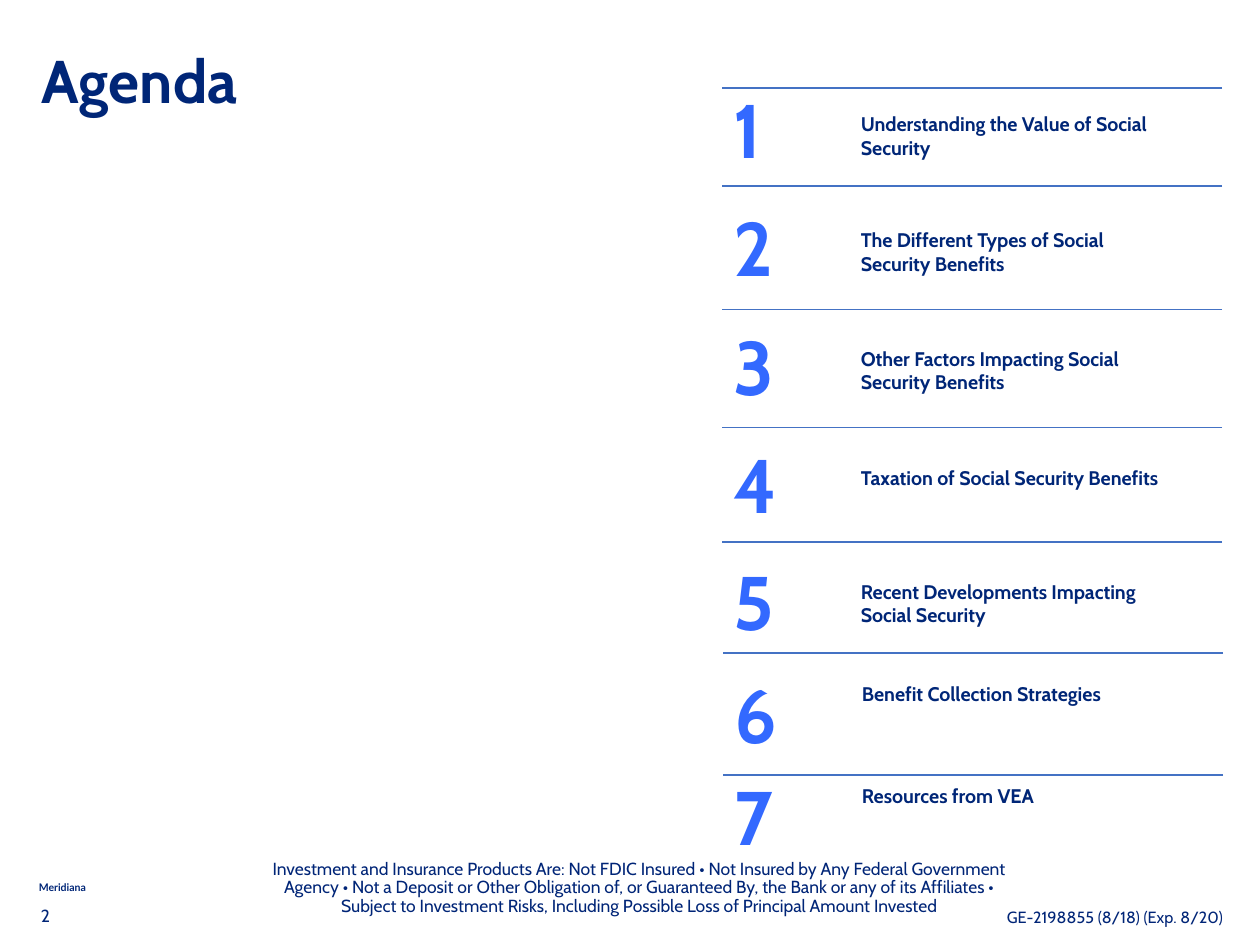
from dataclasses import dataclass

from lxml import etree
from pptx import Presentation
from pptx.dml.color import RGBColor
from pptx.enum.shapes import MSO_CONNECTOR
from pptx.enum.text import MSO_ANCHOR, PP_ALIGN
from pptx.oxml.ns import qn
from pptx.util import Inches, Pt

STRAIGHT = MSO_CONNECTOR.STRAIGHT
TOP, MIDDLE = MSO_ANCHOR.TOP, MSO_ANCHOR.MIDDLE
LEFT, CENTER = PP_ALIGN.LEFT, PP_ALIGN.CENTER


@dataclass(frozen=True)
class Theme:
    """Fonts, colours and type sizes of the agenda."""

    body_font: str = "Cabin"
    brand_font: str = "Lato"
    navy: str = "002677"
    footer_navy: str = "002577"
    bright_blue: str = "3369FF"
    rule_blue: str = "4472C4"
    title_size: float = 41.3
    number_size: float = 52
    topic_size: float = 13.5
    footer_size: float = 12
    code_size: float = 11.1
    brand_size: float = 7.2
    rule_width: float = 1


TOPICS = [
    ("Understanding the Value of Social Security", 0.84, 0.95, 1.02, 0, 1.0),
    ("The Different Types of Social Security Benefits", 1.77, 2.08, 2.12, 0, 1.0),
    ("Other Factors Impacting Social Security Benefits", 2.95, 3.21, 3.25, 0, 1.0),
    ("Taxation of Social Security Benefits", 4.07, 4.33, 4.39, 0, 1.0),
    ("Recent Developments Impacting Social Security", 5.16, 5.45, 5.47, 0, 1.0),
    ("Benefit Collection Strategies", 6.22, 6.52, 6.54, 0.01, Pt(9)),
    ("Resources from VEA", 7.38, 7.5, 7.52, 0.01, Pt(9)),
]

DISCLOSURE = [
    "Investment and Insurance Products Are: Not FDIC Insured • Not Insured by Any Federal "
    "Government Agency • Not a Deposit or Other Obligation of, or Guaranteed By, the Bank or "
    "any of its Affiliates •",
    "Subject to Investment Risks, Including Possible Loss of Principal Amount Invested",
]


class AgendaSlide:
    """Draws agenda elements on one slide in one theme."""

    def __init__(self, slide, theme):
        self.slide = slide
        self.theme = theme

    def text(self, lines, place, size, color, bold=False, font=None,
             anchor=TOP, align=LEFT, spacing=1.0, insets=(0.1, 0.05)):
        """Add a wrapped text box with one paragraph per line."""
        frame = self.slide.shapes.add_textbox(*map(Inches, place)).text_frame
        across, down = map(Inches, insets)
        frame_format = {
            "word_wrap": True, "vertical_anchor": anchor,
            "margin_left": across, "margin_right": across,
            "margin_top": down, "margin_bottom": down,
        }
        for name, value in frame_format.items():
            setattr(frame, name, value)
        frame.text = "\n".join(lines)
        font_format = {"name": font or self.theme.body_font, "size": Pt(size), "bold": bold}
        for paragraph in frame.paragraphs:
            paragraph.alignment = align
            paragraph.line_spacing = spacing
            for name, value in font_format.items():
                setattr(paragraph.font, name, value)
            paragraph.font.color.rgb = RGBColor.from_string(color)

    def rule(self, left, top, width):
        """Add a horizontal dividing line."""
        divider = self.slide.shapes.add_connector(
            STRAIGHT, Inches(left + width), Inches(top), Inches(left), Inches(top))
        divider.line.color.rgb = RGBColor.from_string(self.theme.rule_blue)
        divider.line.width = Pt(self.theme.rule_width)
        etree.SubElement(divider._element.spPr, qn("a:effectLst"))

    def topic(self, number, title, rule_top, number_top, title_top, shift, spacing):
        """Add one agenda row with its rule, number and title."""
        theme = self.theme
        self.rule(6.88 + shift, rule_top, 4.76)
        self.text([str(number)], (6.89 + shift, number_top, 1.09, 0.75), theme.number_size,
                  theme.bright_blue, bold=True, anchor=MIDDLE, spacing=0.7)
        self.text([title], (8.1 + shift, title_top, 3.19, 0.72), theme.topic_size,
                  theme.navy, bold=True, spacing=spacing)

    def footer(self, lines, place, size, align=LEFT):
        """Add regular footer text."""
        self.text(lines, place, size, self.theme.footer_navy, align=align, spacing=0.9)


def main():
    """Build and save the agenda slide."""
    deck = Presentation()
    deck.slide_width, deck.slide_height = Inches(12), Inches(9)
    theme = Theme()
    agenda = AgendaSlide(deck.slides.add_slide(deck.slide_layouts[6]), theme)

    agenda.text(["Agenda"], (0.3, 0.44, 4.58, 0.63), theme.title_size, theme.navy,
                bold=True, spacing=0.9)
    for number, topic in enumerate(TOPICS, start=1):
        agenda.topic(number, *topic)

    agenda.text(["Meridiana"], (0.3, 8.33, 1.86, 0.24), theme.brand_size, theme.navy,
                bold=True, font=theme.brand_font, anchor=MIDDLE, insets=(0.07, 0.04))
    agenda.footer(["2"], (0.29, 8.59, 2.38, 0.3), theme.footer_size)
    agenda.footer(DISCLOSURE, (2.4, 8.14, 7.38, 0.79), theme.footer_size, CENTER)
    agenda.footer(["GE-2198855 (8/18) (Exp. 8/20)"], (9.49, 8.61, 2.38, 0.3), theme.code_size)

    deck.save("out.pptx")


if __name__ == "__main__":
    main()
